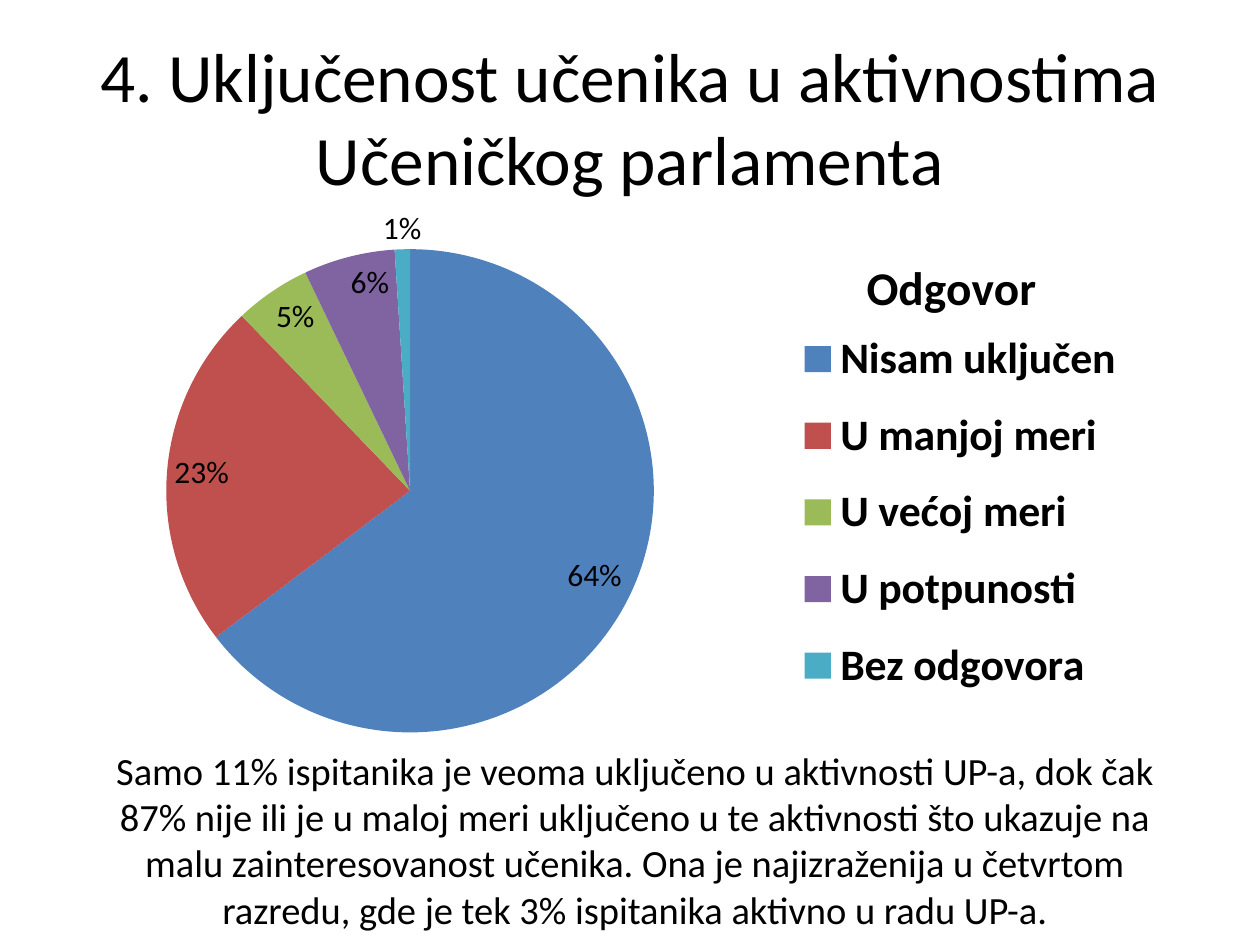
from lxml import etree
from pptx import Presentation
from pptx.chart.data import CategoryChartData
from pptx.dml.color import RGBColor
from pptx.enum.chart import XL_CHART_TYPE as ChartType
from pptx.enum.chart import XL_LABEL_POSITION as LabelPosition
from pptx.enum.chart import XL_LEGEND_POSITION as LegendPosition
from pptx.enum.text import MSO_ANCHOR as Anchor
from pptx.enum.text import PP_ALIGN as Align
from pptx.oxml.ns import qn
from pptx.util import Inches, Pt

BLACK = RGBColor(0x00, 0x00, 0x00)
BLUE = RGBColor(0x4F, 0x81, 0xBD)
RED = RGBColor(0xC0, 0x50, 0x4D)
GREEN = RGBColor(0x9B, 0xBB, 0x59)
PURPLE = RGBColor(0x80, 0x64, 0xA2)
TEAL = RGBColor(0x4B, 0xAC, 0xC6)

ANSWERS = [
    ("Nisam uključen", 64, BLUE),
    ("U manjoj meri", 23, RED),
    ("U većoj meri", 5, GREEN),
    ("U potpunosti", 6, PURPLE),
    ("Bez odgovora", 1, TEAL),
]


def set_layout(parent, index, **values):
    """Place a chart part by fractions of the chart area."""
    layout = parent.find(qn("c:layout"))
    if layout is None:
        layout = etree.Element(qn("c:layout"))
        parent.insert(index, layout)
    for child in list(layout):
        layout.remove(child)
    manual = etree.SubElement(layout, qn("c:manualLayout"))
    for name, value in values.items():
        etree.SubElement(manual, qn(f"c:{name}")).set("val", str(value))


class SlideBuilder:
    font_name = "Calibri"
    color = BLACK

    def __init__(self, slide):
        self.slide = slide

    def style(self, font, size, bold=False):
        font.name = self.font_name
        font.size = Pt(size)
        font.bold = bold
        font.color.rgb = self.color

    def text(self, left, top, width, height, content, size, anchor=Anchor.TOP):
        shape = self.slide.shapes.add_textbox(
            Inches(left), Inches(top), Inches(width), Inches(height))
        frame = shape.text_frame
        frame.word_wrap = True
        frame.vertical_anchor = anchor
        paragraph = frame.paragraphs[0]
        paragraph.alignment = Align.CENTER
        run = paragraph.add_run()
        run.text = content
        self.style(run.font, size)

    def pie(self, left, top, width, height, title, answers):
        data = CategoryChartData(number_format='0"%"')
        data.categories = [name for name, _, _ in answers]
        data.add_series(title, [value for _, value, _ in answers])
        chart = self.slide.shapes.add_chart(
            ChartType.PIE, Inches(left), Inches(top),
            Inches(width), Inches(height), data).chart
        self.style(chart.font, 18)

        # Slices and their labels
        plot = chart.plots[0]
        plot.vary_by_categories = True
        series = plot.series[0]
        for index, (_, _, color) in enumerate(answers):
            fill = series.points[index].format.fill
            fill.solid()
            fill.fore_color.rgb = color
        labels = series.data_labels
        labels.show_value = True
        labels.number_format = '0"%"'
        labels.number_format_is_linked = False
        labels.position = LabelPosition.INSIDE_END
        self.style(labels.font, 18)
        smallest = series.points[len(answers) - 1].data_label
        self.style(smallest.font, 18)
        smallest.position = LabelPosition.OUTSIDE_END
        set_layout(chart.element.find(".//" + qn("c:plotArea")), 0,
                   layoutTarget="inner", xMode="edge", yMode="edge",
                   x=0.09, y=0.06, w=0.43, h=0.79)

        # Title above the legend
        chart.has_title = True
        run = chart.chart_title.text_frame.paragraphs[0].add_run()
        run.text = title
        self.style(run.font, 27, bold=True)
        set_layout(chart.element.find(".//" + qn("c:title")), 1,
                   xMode="edge", yMode="edge", x=0.7, y=0.06)

        # Legend
        chart.has_legend = True
        chart.legend.position = LegendPosition.RIGHT
        chart.legend.include_in_layout = False
        self.style(chart.legend.font, 25, bold=True)
        set_layout(chart.element.find(".//" + qn("c:legend")), 1,
                   xMode="edge", yMode="edge", x=0.63, y=0.16, w=0.32, h=0.66)


def main():
    presentation = Presentation()
    presentation.slide_width = Inches(10)
    presentation.slide_height = Inches(7.5)
    slide = presentation.slides.add_slide(presentation.slide_layouts[6])
    builder = SlideBuilder(slide)

    # Heading
    builder.text(0.5, 0.3, 9, 1.25,
                 "4. Uključenost učenika u aktivnostima Učeničkog parlamenta",
                 39.6, Anchor.MIDDLE)

    # Survey answers
    builder.pie(0.51, 1.62, 9, 4.95, "Odgovor", ANSWERS)

    # Conclusion
    builder.text(0.59, 5.88, 8.9, 1.58,
                 "Samo 11% ispitanika je veoma uključeno u aktivnosti UP-a, "
                 "dok čak 87% nije ili je u maloj meri uključeno u te "
                 "aktivnosti što ukazuje na malu zainteresovanost učenika. "
                 "Ona je najizraženija u četvrtom razredu, gde je tek 3% "
                 "ispitanika aktivno u radu UP-a.", 22)

    presentation.save("out.pptx")


if __name__ == "__main__":
    main()
